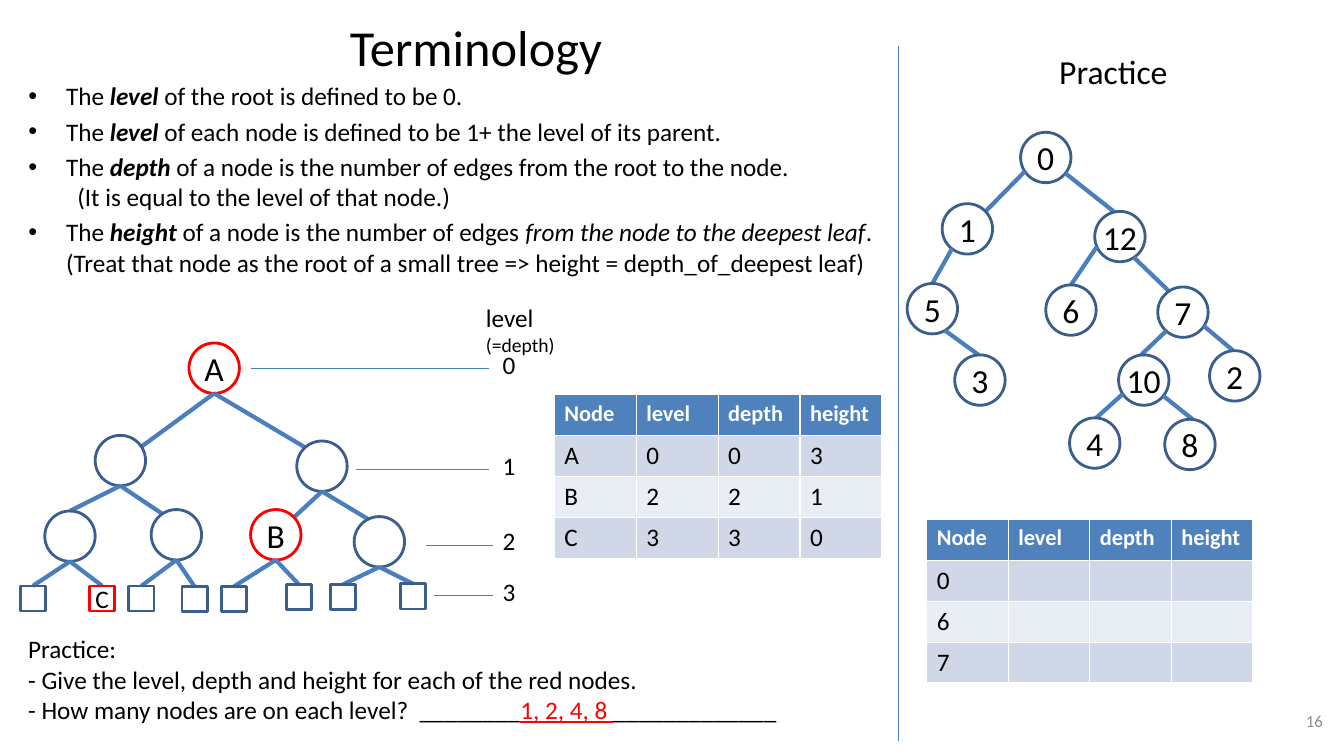
from dataclasses import dataclass
from math import sqrt

from lxml import etree
from pptx import Presentation
from pptx.dml.color import RGBColor
from pptx.enum.shapes import MSO_CONNECTOR, MSO_SHAPE
from pptx.enum.text import MSO_ANCHOR, MSO_AUTO_SIZE, PP_ALIGN
from pptx.oxml.ns import qn
from pptx.util import Pt

STRAIGHT = MSO_CONNECTOR.STRAIGHT
OVAL, RECTANGLE = MSO_SHAPE.OVAL, MSO_SHAPE.RECTANGLE
MIDDLE, TOP = MSO_ANCHOR.MIDDLE, MSO_ANCHOR.TOP
NO_AUTOFIT = MSO_AUTO_SIZE.NONE
LEFT, CENTER, RIGHT = PP_ALIGN.LEFT, PP_ALIGN.CENTER, PP_ALIGN.RIGHT


@dataclass(frozen=True)
class Theme:
    font: str = "Calibri"
    text: RGBColor = RGBColor(0, 0, 0)
    muted: RGBColor = RGBColor(0x8C, 0x8C, 0x8C)
    white: RGBColor = RGBColor(255, 255, 255)
    red: RGBColor = RGBColor(255, 0, 0)
    outline: RGBColor = RGBColor(0x3A, 0x5F, 0x8C)
    edge: RGBColor = RGBColor(0x4B, 0x7E, 0xBC)
    header: RGBColor = RGBColor(0x4F, 0x81, 0xBD)
    bands: tuple = (RGBColor(0xD0, 0xD8, 0xE8), RGBColor(0xE9, 0xED, 0xF4))
    title: int = 36
    large: int = 24
    body: int = 18
    column: int = 16
    note: int = 14
    number: int = 12


@dataclass(frozen=True)
class Node:
    left: float
    top: float
    parent: str = ""
    leave: float = 0
    arrive: float = 0
    label: str = ""
    red: bool = False
    leaf: bool = False

    @property
    def size(self):
        return 18 if self.leaf else 36

    def outline_point(self, shift, below):
        radius = self.size / 2
        rise = radius if self.leaf else sqrt(radius ** 2 - shift ** 2)
        return self.left + radius + shift, self.top + radius + (rise if below else -rise)


THEME = Theme()

EXAMPLE_TREE = {
    "A": Node(121, 0, label="A", red=True),
    "left": Node(54, 66, "A", arrive=15),
    "right": Node(198, 70, "A", arrive=-12),
    "left-left": Node(18, 120, "left"),
    "left-right": Node(94, 119, "left", arrive=-10),
    "B": Node(165, 119, "right", arrive=13, label="B", red=True),
    "right-right": Node(239, 124, "right", arrive=-8),
    "leaf 1": Node(0.5, 173.5, "left-left", leaf=True),
    "C": Node(50, 173.5, "left-left", label="C", red=True, leaf=True),
    "leaf 3": Node(78, 173.5, "left-right", leaf=True),
    "leaf 4": Node(116, 174, "left-right", leaf=True),
    "leaf 5": Node(144, 174, "B", leaf=True),
    "leaf 6": Node(190.5, 172.5, "B", leaf=True),
    "leaf 7": Node(222, 172.5, "right-right", leaf=True),
    "leaf 8": Node(272, 172, "right-right", leaf=True),
}
PRACTICE_TREE = {
    "0": Node(81, 0, label="0"),
    "1": Node(25, 51, "0", -15, 13, "1"),
    "12": Node(134, 56.5, "0", 14, -4, "12"),
    "5": Node(0, 108, "1", -11, 0, "5"),
    "6": Node(99, 109, "12", -16.5, 0, "6"),
    "7": Node(179, 110.5, "12", 10, -10, "7"),
    "3": Node(34, 159, "5", 9, -1, "3"),
    "10": Node(151, 159, "7", -12, -2, "10"),
    "2": Node(216, 156, "7", 15, -1, "2"),
    "4": Node(116, 204, "10", -15, 1, "4"),
    "8": Node(184, 205, "10", 14, 2, "8"),
}
LEVELS = [(165, 335, 18.5), (240, 335, 90.5), (290, 338, 144.5), (296, 338, 180.5)]
DEFINITIONS = [
    [("The ", ""), ("level", "bi"), (" of the root is defined to be 0.", "")],
    [("The ", ""), ("level", "bi"), (" of each node is defined to be 1+ the level of its parent.", "")],
    [("The ", ""), ("depth ", "bi"), ("of a node is the number of edges from the root to the node.", "")],
    [("(It is equal to the level of that node.)", "")],
    [("The ", ""), ("height", "bi"), (" of a node is the number of edges ", ""),
     ("from the node to the deepest leaf", "i"),
     (". (Treat that node as the root of a small tree => height = depth_of_deepest leaf)", "")],
]
COLUMNS = ["Node", "level", "depth", "height"]
ANSWERS = [["A", "0", "0", "3"], ["B", "2", "2", "1"], ["C", "3", "3", "0"]]
QUESTIONS = [[node, "", "", ""] for node in "067"]


def place(shape, box):
    shape.left, shape.top, shape.width, shape.height = map(Pt, box)


def style(paragraph, size, color=THEME.text, align=LEFT, bold=False):
    paragraph.alignment = align
    font = paragraph.font
    font.name, font.size, font.bold = THEME.font, Pt(size), bold
    font.color.rgb = color


def add_text(slide, box, lines, color=THEME.text, align=LEFT, anchor=TOP, wrap=True):
    frame = slide.shapes.add_textbox(*map(Pt, box)).text_frame
    frame.word_wrap, frame.vertical_anchor = wrap, anchor
    for index, (text, size) in enumerate(lines):
        paragraph = frame.add_paragraph() if index else frame.paragraphs[0]
        paragraph.text = text
        style(paragraph, size, color, align)
    return frame


def add_line(slide, start, end, width):
    line = slide.shapes.add_connector(STRAIGHT, *map(Pt, (*start, *end)))
    line.line.color.rgb, line.line.width = THEME.edge, Pt(width)
    etree.SubElement(line._element.spPr, qn("a:effectLst"))


def add_tree(slide, origin, nodes):
    x, y = origin
    for node in nodes.values():
        if node.parent:
            start_x, start_y = nodes[node.parent].outline_point(node.leave, True)
            end_x, end_y = node.outline_point(node.arrive, False)
            add_line(slide, (x + start_x, y + start_y), (x + end_x, y + end_y), 3)
        box = (x + node.left, y + node.top, node.size, node.size)
        shape = slide.shapes.add_shape(RECTANGLE if node.leaf else OVAL, *map(Pt, box))
        shape.shadow.inherit = False
        shape.fill.background()
        shape.line.color.rgb = THEME.red if node.red else THEME.outline
        shape.line.width = Pt(2)
        if node.label:
            frame = shape.text_frame
            frame.margin_left = frame.margin_right = frame.margin_top = frame.margin_bottom = 0
            frame.word_wrap, frame.vertical_anchor = False, MIDDLE
            frame.text = node.label
            style(frame.paragraphs[0], THEME.body if node.leaf else THEME.large, align=CENTER)


def add_levels(slide, origin):
    x, y = origin
    add_text(slide, (x + 326, y - 32.5, 64, 46), [("level", THEME.body), ("(=depth)", THEME.note)], wrap=False)
    for level, (start, end, height) in enumerate(LEVELS):
        add_line(slide, (x + start, y + height), (x + end, y + height), 0.75)
        add_text(slide, (x + 338, y + height - 17.5, 24, 29), [(str(level), THEME.body)], wrap=False)


def add_node_table(slide, box, rows):
    table = slide.shapes.add_table(len(rows) + 1, len(COLUMNS), *map(Pt, box)).table
    for row_index, row in enumerate([COLUMNS] + rows):
        for column_index, text in enumerate(row):
            cell = table.cell(row_index, column_index)
            cell.text = text
            cell.fill.solid()
            if row_index:
                cell.fill.fore_color.rgb = THEME.bands[(row_index - 1) % 2]
                style(cell.text_frame.paragraphs[0], THEME.body)
            else:
                cell.fill.fore_color.rgb = THEME.header
                style(cell.text_frame.paragraphs[0], THEME.column, THEME.white, bold=True)


def fill_definitions(placeholder, box):
    place(placeholder, box)
    frame = placeholder.text_frame
    frame.auto_size = NO_AUTOFIT
    for index, parts in enumerate(DEFINITIONS):
        paragraph = frame.add_paragraph() if index else frame.paragraphs[0]
        for text, emphasis in parts:
            run = paragraph.add_run()
            run.text = text
            run.font.name, run.font.size = THEME.font, Pt(THEME.body)
            run.font.bold, run.font.italic = "b" in emphasis, "i" in emphasis
        if len(parts) == 1:
            paragraph.space_before = Pt(0)
            properties = paragraph._p.get_or_add_pPr()
            properties.set("marL", str(Pt(35)))
            properties.set("indent", "0")
            etree.SubElement(properties, qn("a:buNone"))


def add_exercise(slide, box):
    lines = ["Practice:", "- Give the level, depth and height for each of the red nodes.",
             "- How many nodes are on each level?  ________"]
    frame = add_text(slide, box, [(line, THEME.body) for line in lines])
    answer, blank = frame.paragraphs[-1].add_run(), frame.paragraphs[-1].add_run()
    answer.text, blank.text = "1, 2, 4, 8 ", "_____________"
    answer.font.color.rgb, answer.font.underline = THEME.red, True


def add_lesson(slide):
    title, body = slide.placeholders
    place(title, (16, 6, 648, 54))
    title.text_frame.text = "Terminology"
    style(title.text_frame.paragraphs[0], THEME.title, align=CENTER)
    fill_definitions(body, (13, 54, 631, 145))
    add_tree(slide, (14, 245), EXAMPLE_TREE)
    add_levels(slide, (14, 245))
    add_node_table(slide, (396, 282, 234, 117), ANSWERS)
    add_exercise(slide, (13, 449, 563, 73))


def add_practice(slide):
    add_line(slide, (642, 33), (642, 529), 0.75)
    add_text(slide, (749.5, 32.5, 93, 36), [("Practice", THEME.large)], wrap=False)
    add_tree(slide, (648, 94.5), PRACTICE_TREE)
    add_node_table(slide, (662, 371, 233, 117), QUESTIONS)
    add_text(slide, (728, 500, 224, 29), [("16", THEME.number)], THEME.muted, RIGHT, MIDDLE)


def main():
    presentation = Presentation()
    presentation.slide_width, presentation.slide_height = Pt(960), Pt(540)
    slide = presentation.slides.add_slide(presentation.slide_layouts[1])
    add_lesson(slide)
    add_practice(slide)
    presentation.save("out.pptx")


if __name__ == "__main__":
    main()
